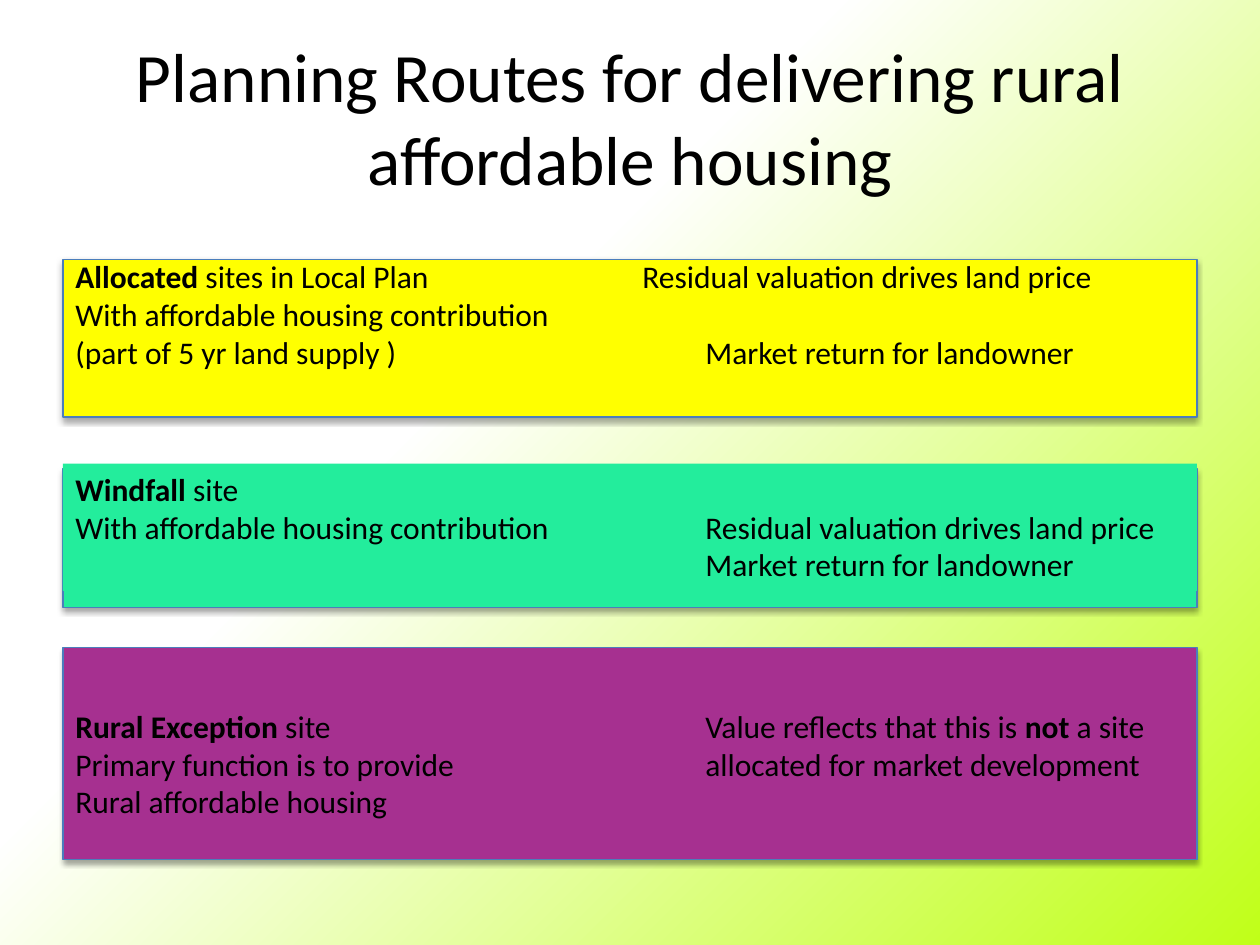
from lxml import etree
from pptx import Presentation
from pptx.dml.color import RGBColor
from pptx.enum.shapes import MSO_SHAPE
from pptx.enum.text import MSO_ANCHOR, PP_ALIGN
from pptx.oxml import parse_xml
from pptx.oxml.ns import nsdecls, qn
from pptx.util import Inches, Pt

RECTANGLE = MSO_SHAPE.RECTANGLE
TOP, MIDDLE = MSO_ANCHOR.TOP, MSO_ANCHOR.MIDDLE
LEFT, CENTER = PP_ALIGN.LEFT, PP_ALIGN.CENTER

WIDTH, HEIGHT = Inches(10), Inches(7.5)
MARGIN, CONTENT_WIDTH = 0.05, 0.9  # shares of the slide's width
COLUMN, EARLY_COLUMN = 5, 4.5      # tab stops of the right-hand text, inches

COLORS = {
    "text": "000000",
    "outline": "4B7EBC",
    "lime": "C0FF18",
    "white": "FFFFFF",
    "allocated": "FFFF00",
    "windfall": "23ED9C",
    "exception": "A63090",
}

# Band top and height, text top and height (inches), text fill,
# then lines of (tab stop, [(words, bold), ...])
ROUTES = [
    ("allocated", 2.06, 1.25, 1.99, 1.62, None, [
        (EARLY_COLUMN, [("Allocated", True),
                        (" sites in Local Plan\tResidual valuation drives land price", False)]),
        (COLUMN, [("With affordable housing contribution", False)]),
        (COLUMN, [("(part of 5 yr land supply )\tMarket return for landowner", False)]),
    ]),
    ("windfall", 3.72, 1.1, 3.68, 1.01, "windfall", [
        (COLUMN, [("Windfall", True), (" site", False)]),
        (COLUMN, [("With affordable housing contribution\tResidual valuation drives land price",
                   False)]),
        (COLUMN, [("\tMarket return for landowner", False)]),
    ]),
    ("exception", 5.14, 1.68, 5.56, 1.01, None, [
        (COLUMN, [("Rural Exception ", True), ("site\tValue reflects that this is ", False),
                  ("not", True), (" a site", False)]),
        (COLUMN, [("Primary function is to provide\tallocated for market development", False)]),
        (COLUMN, [("Rural affordable housing", False)]),
    ]),
]


def color(name):
    return RGBColor.from_string(COLORS[name])


def frame(top, height):
    """Full content width at the given top and height in inches."""
    return (int(WIDTH * MARGIN), Inches(top), int(WIDTH * CONTENT_WIDTH), Inches(height))


def paint_background(slide):
    """Lime glow spreading from the bottom right corner."""
    slide.background.fill.solid()
    solid = slide.background._cSld.find(".//" + qn("a:solidFill"))
    gradient = parse_xml(
        f'<a:gradFill {nsdecls("a")} rotWithShape="1"><a:gsLst>'
        f'<a:gs pos="0"><a:srgbClr val="{COLORS["lime"]}"/></a:gs>'
        f'<a:gs pos="62000"><a:srgbClr val="{COLORS["white"]}"/></a:gs>'
        '</a:gsLst><a:path path="circle">'
        '<a:fillToRect l="100000" t="100000"/></a:path></a:gradFill>')
    solid.getparent().replace(solid, gradient)


def add_band(slide, fill, top, height):
    """Outlined rectangle with a soft shadow below it."""
    band = slide.shapes.add_shape(RECTANGLE, *frame(top, height))
    band.fill.solid()
    band.fill.fore_color.rgb = color(fill)
    band.line.color.rgb = color("outline")
    band.line.width = Pt(0.75)
    band.shadow.inherit = False
    effects = band._element.spPr.find(qn("a:effectLst"))
    effects.append(parse_xml(
        f'<a:outerShdw {nsdecls("a")} blurRad="{Pt(3.1)}" dist="{Pt(1.8)}" '
        'dir="5400000" rotWithShape="0">'
        f'<a:srgbClr val="{COLORS["text"]}"><a:alpha val="35000"/></a:srgbClr>'
        '</a:outerShdw>'))


def add_tab_stop(paragraph, inches):
    tabs = etree.SubElement(paragraph._p.get_or_add_pPr(), qn("a:tabLst"))
    etree.SubElement(tabs, qn("a:tab"), pos=str(Inches(inches)), algn="l")


def add_text(slide, top, height, lines, size, alignment=LEFT, anchor=TOP, fill=None):
    box = slide.shapes.add_textbox(*frame(top, height))
    if fill:
        box.fill.solid()
        box.fill.fore_color.rgb = color(fill)
    text_frame = box.text_frame
    text_frame.word_wrap = True
    text_frame.vertical_anchor = anchor
    for index, (tab_stop, runs) in enumerate(lines):
        paragraph = text_frame.add_paragraph() if index else text_frame.paragraphs[0]
        paragraph.alignment = alignment
        if tab_stop:
            add_tab_stop(paragraph, tab_stop)
        for words, bold in runs:
            run = paragraph.add_run()
            run.text = words
            run.font.color.rgb = color("text")
            text_format = {"name": "Calibri", "size": Pt(size), "bold": bold}
            for attribute, value in text_format.items():
                setattr(run.font, attribute, value)


def main():
    presentation = Presentation()
    presentation.slide_width, presentation.slide_height = WIDTH, HEIGHT
    slide = presentation.slides.add_slide(presentation.slide_layouts[6])
    paint_background(slide)

    # Title
    title = "Planning Routes for delivering rural affordable housing"
    add_text(slide, 0.3, 1.25, [(None, [(title, False)])], 39.6, CENTER, MIDDLE)

    # One band with its text for each planning route
    for band_fill, band_top, band_height, top, height, fill, lines in ROUTES:
        add_band(slide, band_fill, band_top, band_height)
        add_text(slide, top, height, lines, 18, fill=fill)

    presentation.save("out.pptx")


if __name__ == "__main__":
    main()
